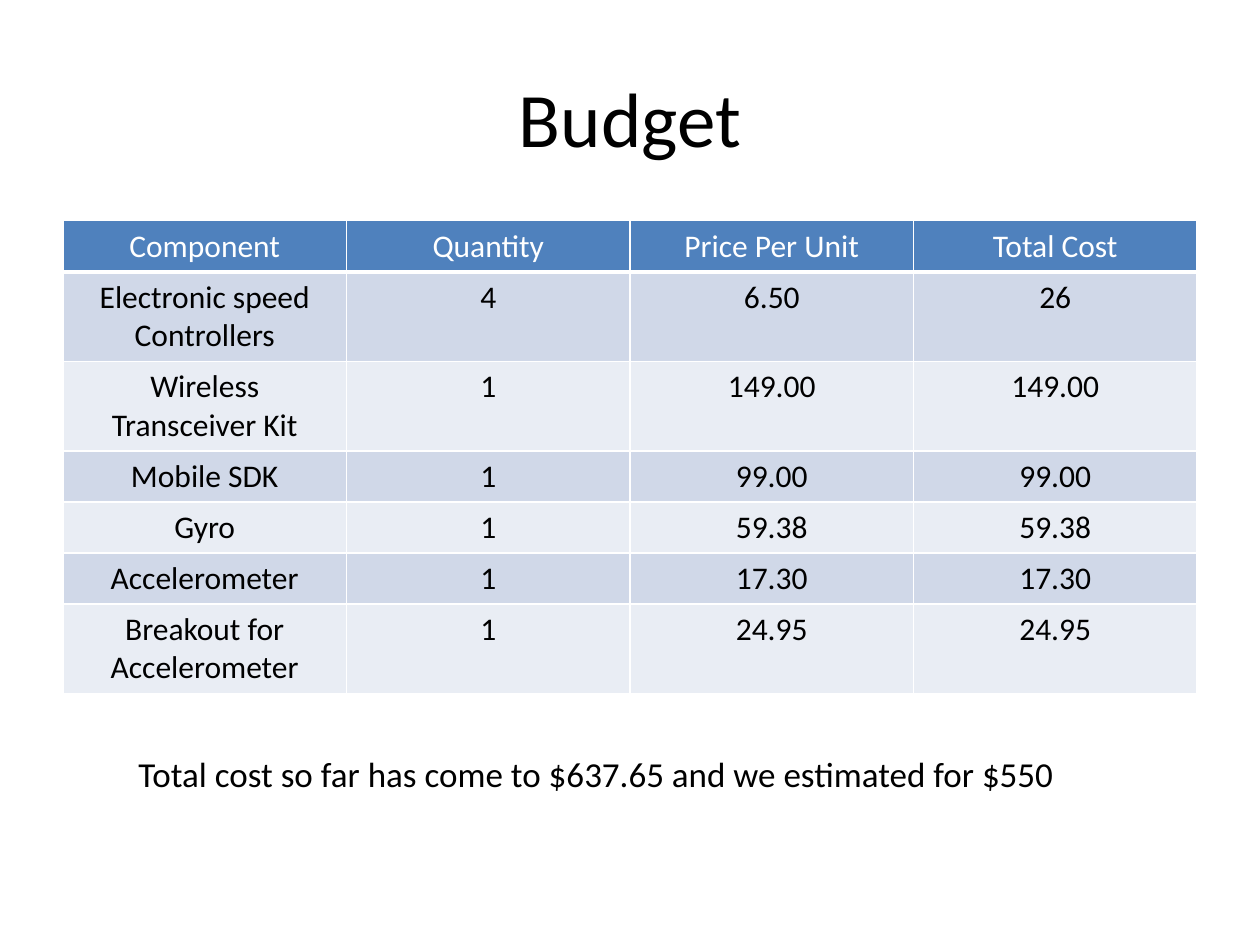
from lxml import etree
from pptx import Presentation
from pptx.dml.color import RGBColor
from pptx.enum.text import MSO_ANCHOR, MSO_AUTO_SIZE, PP_ALIGN
from pptx.oxml.ns import qn
from pptx.util import Cm, Pt

CENTER, LEFT = PP_ALIGN.CENTER, PP_ALIGN.LEFT
MIDDLE = MSO_ANCHOR.MIDDLE
GROW = MSO_AUTO_SIZE.SHAPE_TO_FIT_TEXT
TITLE_ONLY = 5

FONT = "Calibri"
BLACK = RGBColor(0x00, 0x00, 0x00)
WHITE = RGBColor(0xFF, 0xFF, 0xFF)
BLUE = RGBColor(0x4F, 0x81, 0xBD)
BANDS = RGBColor(0xD0, 0xD8, 0xE8), RGBColor(0xE9, 0xED, 0xF4)

TITLE = "Budget"
HEADERS = ["Component", "Quantity", "Price Per Unit", "Total Cost"]
ITEMS = [
    ("Electronic speed Controllers", "4", "6.50", "26"),
    ("Wireless Transceiver Kit", "1", "149.00", "149.00"),
    ("Mobile SDK", "1", "99.00", "99.00"),
    ("Gyro", "1", "59.38", "59.38"),
    ("Accelerometer", "1", "17.30", "17.30"),
    ("Breakout for Accelerometer", "1", "24.95", "24.95"),
]
SUMMARY = "Total cost so far has come to $637.65 and we estimated for $550"

MARGIN = 1.27
CONTENT_WIDTH = 25.4 - 2 * MARGIN
ROW_HEIGHT = 1.03


def write(frame, text, size, color, align):
    para = frame.paragraphs[0]
    para.alignment = align
    span = para.add_run()
    span.text = text
    span.font.name = FONT
    span.font.size = Pt(size)
    span.font.bold = False
    span.font.color.rgb = color


def set_borders(cell, bottom_width):
    properties = cell._tc.get_or_add_tcPr()
    for side in "LRTB":
        width = bottom_width if side == "B" else 1
        line = etree.SubElement(properties, qn(f"a:ln{side}"), w=str(Pt(width)))
        fill = etree.SubElement(line, qn("a:solidFill"))
        etree.SubElement(fill, qn("a:srgbClr"), val=str(WHITE))


def add_title(page):
    title = page.shapes.title
    title.left, title.top = Cm(MARGIN), Cm(0.76)
    title.width, title.height = Cm(CONTENT_WIDTH), Cm(3.18)
    title.text_frame.vertical_anchor = MIDDLE
    write(title.text_frame, TITLE, 44, BLACK, CENTER)


def add_budget_table(page):
    rows = [HEADERS, *ITEMS]
    table = page.shapes.add_table(
        len(rows), len(HEADERS), Cm(MARGIN), Cm(4.45),
        Cm(CONTENT_WIDTH), Cm(ROW_HEIGHT * len(rows))).table
    for row_index, values in enumerate(rows):
        is_header = row_index == 0
        for column_index, value in enumerate(values):
            cell = table.cell(row_index, column_index)
            set_borders(cell, 3 if is_header else 1)
            cell.fill.solid()
            cell.fill.fore_color.rgb = BLUE if is_header else BANDS[(row_index - 1) % 2]
            write(cell.text_frame, value, 18, WHITE if is_header else BLACK, CENTER)


def add_summary(page):
    box = page.shapes.add_textbox(Cm(2.54), Cm(15.04), Cm(20.75), Cm(1.11))
    box.text_frame.word_wrap = True
    box.text_frame.auto_size = GROW
    write(box.text_frame, SUMMARY, 20, BLACK, LEFT)


def main():
    deck = Presentation()
    deck.slide_width, deck.slide_height = Cm(25.4), Cm(19.05)
    page = deck.slides.add_slide(deck.slide_layouts[TITLE_ONLY])
    add_title(page)
    add_budget_table(page)
    add_summary(page)
    deck.save("out.pptx")


if __name__ == "__main__":
    main()
